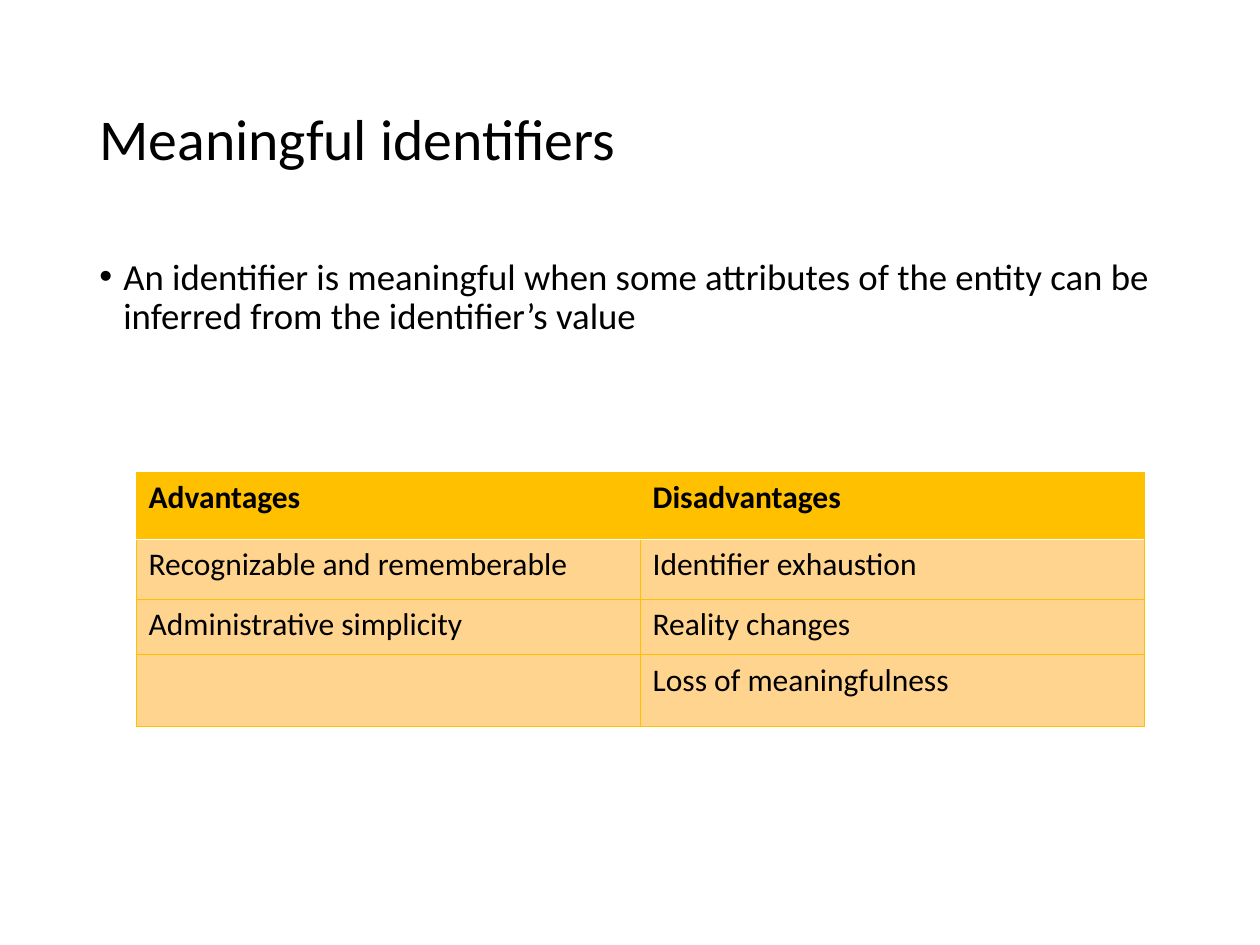
"""Build the slide on meaningful identifiers, with its table of pros and cons."""
from dataclasses import dataclass

from lxml import etree
from pptx import Presentation
from pptx import util as u
from pptx.dml.color import RGBColor
from pptx.enum import text
from pptx.oxml.ns import qn

WIDTH, HEIGHT = u.Inches(10), u.Inches(7.5)
FONT = "Calibri"
BLACK, WHITE, GOLD, PALE_GOLD = "000000", "FFFFFF", "FFC000", "FFD48F"
HAIRLINE, RULE = 0.5, 1


@dataclass(frozen=True)
class Area:
    """A rectangle in shares of the slide's width and height."""
    left: float
    top: float
    width: float
    height: float

    def lengths(self) -> tuple[int, int, int, int]:
        return (round(self.left * WIDTH), round(self.top * HEIGHT),
                round(self.width * WIDTH), round(self.height * HEIGHT))


@dataclass(frozen=True)
class Passage:
    """A paragraph in its own text box."""
    words: str
    area: Area
    size: float
    anchor: text.MSO_ANCHOR
    space_before: float = 0
    bullet: str = ""


@dataclass(frozen=True)
class Row:
    """A table row, its height a share of the slide's height."""
    entries: tuple[str, str]
    height: float
    fill: str = PALE_GOLD
    bold: bool = False


PASSAGES = (
    Passage("Meaningful identifiers", Area(0.069, 0.053, 0.862, 0.193), 33,
            text.MSO_ANCHOR.MIDDLE),
    Passage("An identifier is meaningful when some attributes of the entity "
            "can be inferred from the identifier’s value",
            Area(0.069, 0.267, 0.862, 0.635), 21, text.MSO_ANCHOR.TOP, 7.5, "•"),
)
ROWS = (
    Row(("Advantages", "Disadvantages"), 0.071, GOLD, True),
    Row(("Recognizable and rememberable", "Identifier exhaustion"), 0.063),
    Row(("Administrative simplicity", "Reality changes"), 0.059),
    Row(("", "Loss of meaningfulness"), 0.076),
)
COMPARISON = Area(0.108, 0.5, 0.8, sum(row.height for row in ROWS))


def colour(value: str) -> RGBColor:
    """Turn a hex string into a colour."""
    return RGBColor.from_string(value)


def style(paragraph, size: float, bold: bool = False) -> None:
    """Format the paragraph and its runs."""
    for font in (paragraph.font, *(run.font for run in paragraph.runs)):
        font.name, font.size, font.bold = FONT, u.Pt(size), bold
        font.color.rgb = colour(BLACK)


def add_bullet(paragraph, mark: str) -> None:
    """Give the paragraph a bullet and a hanging indent."""
    properties = paragraph._p.get_or_add_pPr()
    indent = u.Inches(0.19)
    properties.set("marL", str(indent))
    properties.set("indent", str(-indent))
    face = etree.Element(qn("a:buFont"), typeface="Arial")
    bullet = etree.Element(qn("a:buChar"), char=mark)
    defaults = properties.find(qn("a:defRPr"))
    defaults.addprevious(face)
    defaults.addprevious(bullet)


def add_passage(slide, passage: Passage) -> None:
    """Draw one wrapped paragraph."""
    frame = slide.shapes.add_textbox(*passage.area.lengths()).text_frame
    frame.word_wrap = True
    frame.vertical_anchor = passage.anchor
    frame.text = passage.words
    paragraph = frame.paragraphs[0]
    paragraph.line_spacing = 0.9
    paragraph.space_before = u.Pt(passage.space_before)
    style(paragraph, passage.size)
    if passage.bullet:
        add_bullet(paragraph, passage.bullet)


def add_border(cell, side: str, value: str, width: float) -> None:
    """Draw the cell's border on one side: L, R, T or B."""
    line = etree.SubElement(cell._tc.get_or_add_tcPr(), qn(f"a:ln{side}"),
                            w=str(u.Pt(width)))
    fill = etree.SubElement(line, qn("a:solidFill"))
    etree.SubElement(fill, qn("a:srgbClr"), val=value)


def add_comparison(slide, rows: tuple[Row, ...], area: Area) -> None:
    """Draw the table, with a white rule under its header."""
    table = slide.shapes.add_table(len(rows), len(rows[0].entries),
                                   *area.lengths()).table
    table.horz_banding = False
    for index, row in enumerate(rows):
        table.rows[index].height = round(row.height * HEIGHT)
        ruled_side = {0: "B", 1: "T"}.get(index)
        for column, entry in enumerate(row.entries):
            cell = table.cell(index, column)
            cell.text = entry
            paragraph = cell.text_frame.paragraphs[0]
            paragraph.space_before = u.Pt(3.6)
            style(paragraph, 18, row.bold)
            for side in "LRTB":
                edge = (WHITE, RULE) if side == ruled_side else (GOLD, HAIRLINE)
                add_border(cell, side, *edge)
            cell.fill.solid()
            cell.fill.fore_color.rgb = colour(row.fill)


def main() -> None:
    """Build and save the slide."""
    deck = Presentation()
    deck.slide_width, deck.slide_height = WIDTH, HEIGHT
    slide = deck.slides.add_slide(deck.slide_layouts[6])
    for passage in PASSAGES:
        add_passage(slide, passage)
    add_comparison(slide, ROWS, COMPARISON)
    deck.save("out.pptx")


if __name__ == "__main__":
    main()
